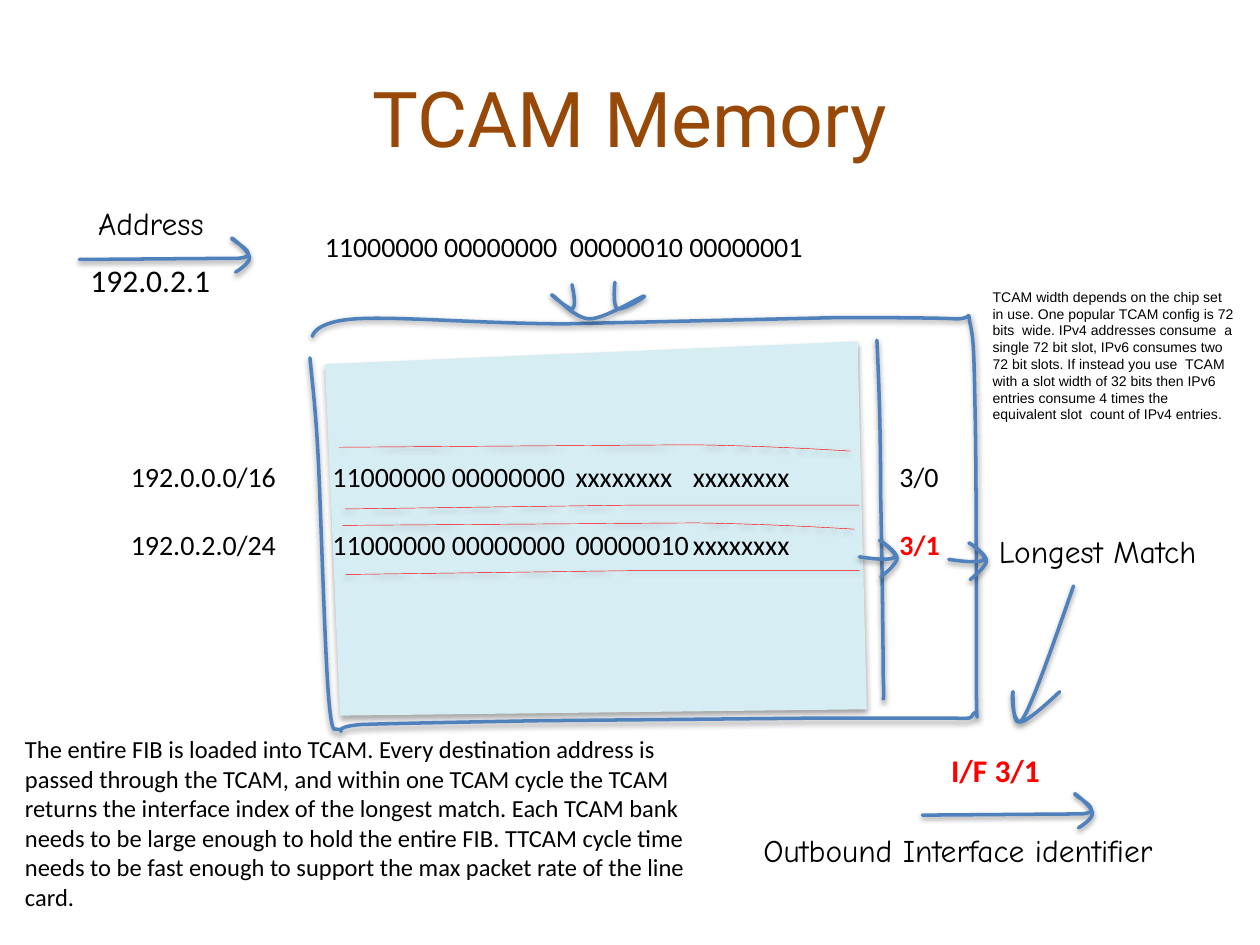
from lxml import etree
from pptx import Presentation
from pptx.dml.color import RGBColor
from pptx.enum.text import MSO_ANCHOR, PP_ALIGN
from pptx.oxml.ns import qn
from pptx.util import Inches, Pt

CENTER = PP_ALIGN.CENTER
MIDDLE = MSO_ANCHOR.MIDDLE
rgb = RGBColor.from_string
BLUE, RED, BLACK = "4F81BD", "FF0000", "000000"

deck = Presentation()
deck.slide_width, deck.slide_height = Inches(10), Inches(7.5)
slide = deck.slides.add_slide(deck.slide_layouts[6])


def sketch(start, parts, color=BLUE, width=2, shift=(0, 0), filled=False):
    dx, dy = shift
    flat = [n for part in parts for n in part]
    dots = [(Inches(x + dx), Inches(y + dy)) for x, y in zip(flat[::2], flat[1::2])]
    pen = slide.shapes.build_freeform(Inches(start[0] + dx), Inches(start[1] + dy))
    pen.add_line_segments(dots, close=filled)
    shape = pen.convert_to_shape()
    steps = list(shape._element.iter(qn("a:lnTo")))
    for part in parts:
        group = [steps.pop(0) for _ in range(len(part) // 2)]
        if len(group) == 3:
            curve = etree.Element(qn("a:cubicBezTo"))
            group[0].addprevious(curve)
            for step in group:
                curve.append(step[0])
                step.getparent().remove(step)
    if filled:
        shape.fill.solid()
        shape.fill.fore_color.rgb = rgb(color)
        shape.line.fill.background()
    else:
        shape.fill.background()
        shape.line.color.rgb = rgb(color)
        shape.line.width = Pt(width)
        shape._element.spPr.find(qn("a:ln")).set("cap", "rnd")
    shape.shadow.inherit = False
    effects = shape._element.spPr.find(qn("a:effectLst"))
    shade = etree.SubElement(effects, qn("a:outerShdw"), blurRad="40000",
                             dist="23000" if filled else "20000",
                             dir="5400000", rotWithShape="0")
    tint = etree.SubElement(shade, qn("a:srgbClr"), val=BLACK)
    etree.SubElement(tint, qn("a:alpha"), val="35000" if filled else "38000")


def label(text, box, size, face, color=BLACK, bold=False, wrap=False):
    frame = slide.shapes.add_textbox(*[Inches(n) for n in box]).text_frame
    frame.word_wrap = wrap
    line = frame.paragraphs[0]
    line.text = text
    line.font.size = Pt(size)
    line.font.name = face
    line.font.bold = bold
    line.font.color.rgb = rgb(color)
    return frame


sketch((2.58, 2.89), [(2.7, 5.68), (6.88, 5.63), (6.81, 2.86), (6.81, 2.71)],
       "D7EDF4", filled=True)

for shift in [(0, 0), (6.69, 4.41)]:
    sketch((0.63, 2.06), [(1.9, 2.05), (2.1, 2.03, 1.82, 1.9, 1.84, 1.89),
                          (1.85, 1.89, 1.98, 2, 1.98, 2.04),
                          (1.99, 2.09, 1.87, 2.16, 1.87, 2.16)], shift=shift)

sketch((2.46, 2.84), [
    (2.48, 3.05, 2.51, 3.27, 2.53, 3.72), (2.55, 4.17, 2.58, 5.2, 2.61, 5.55),
    (2.64, 5.89, 2.66, 5.76, 2.7, 5.79), (2.74, 5.83, 2.61, 5.77, 2.87, 5.75),
    (3.13, 5.74, 4.27, 5.72, 4.27, 5.72), (6.41, 5.7), (7.52, 5.7),
    (7.74, 5.7, 7.69, 5.71, 7.73, 5.66), (7.77, 5.62, 7.75, 5.85, 7.75, 5.46),
    (7.75, 5.06, 7.75, 3.77, 7.74, 3.29), (7.73, 2.81, 7.73, 2.7, 7.7, 2.57),
    (7.67, 2.44, 7.74, 2.54, 7.57, 2.53), (7.4, 2.52, 6.67, 2.52, 6.67, 2.52),
    (4.5, 2.57), (3.86, 2.57, 3.16, 2.51, 2.83, 2.53),
    (2.49, 2.55, 2.48, 2.67, 2.48, 2.67)])
sketch((6.96, 2.7), [(6.98, 3.1, 6.99, 3.5, 6.99, 3.94),
                     (7, 4.38, 7.01, 5.08, 7.01, 5.35),
                     (7.02, 5.61, 7.01, 5.54, 7.01, 5.54)])
sketch((4.54, 2.26), [
    (4.56, 2.35, 4.57, 2.44, 4.54, 2.45), (4.52, 2.46, 4.36, 2.33, 4.38, 2.34),
    (4.41, 2.35, 4.56, 2.53, 4.68, 2.53), (4.8, 2.53, 5.07, 2.36, 5.11, 2.35),
    (5.15, 2.34, 4.94, 2.47, 4.9, 2.45), (4.86, 2.43, 4.88, 2.24, 4.88, 2.24)])

for shift in [(0, 0), (0.03, 0.62)]:
    sketch((2.69, 3.55), [(5.49, 3.53), (6.16, 3.54, 6.75, 3.58, 6.75, 3.58)],
           RED, 0.25, shift)
for drop in [0, 0.52]:
    sketch((2.74, 4.04), [(4.98, 4.01), (6.82, 4.01)], RED, 0.25, (0, drop))

for shift in [(0, 0), (0.71, 0.02)]:
    sketch((6.82, 4.42), [(6.95, 4.44, 7.08, 4.45, 7.1, 4.42),
                          (7.13, 4.4, 6.98, 4.28, 6.98, 4.29),
                          (6.99, 4.29, 7.12, 4.38, 7.12, 4.43),
                          (7.12, 4.48, 6.99, 4.58, 6.99, 4.58)], shift=shift)
sketch((8.52, 4.65), [(8.36, 5.11, 8.2, 5.57, 8.12, 5.7),
                      (8.03, 5.84, 8.04, 5.48, 8.04, 5.49),
                      (8.03, 5.49, 8.03, 5.73, 8.1, 5.73),
                      (8.16, 5.73, 8.41, 5.49, 8.41, 5.49)])

title = label("TCAM Memory", (0.5, 0.3, 9, 1.25), 44, "Roboto", "984807", wrap=True)
title.vertical_anchor = MIDDLE
title.paragraphs[0].alignment = CENTER

label("Address", (0.68, 1.57, 1.18, 0.4), 18, "Comic Neue")
label("Outbound Interface identifier", (5.96, 6.55, 4.08, 0.4), 18, "Comic Neue")
label("Longest Match", (7.83, 4.17, 2.08, 0.4), 18, "Comic Neue")
label("192.0.2.1", (0.62, 2.02, 1.16, 0.4), 18, "Calibri")
label("I/F 3/1", (7.45, 5.91, 0.92, 0.4), 18, "Calibri", RED, True)
label("11000000 00000000  00000010 00000001", (2.48, 1.77, 4.43, 0.37), 16, "Calibri")

rows = [("192.0.0.0/16\t11000000 00000000\txxxxxxxx\txxxxxxxx\t", "3/0"),
        ("192.0.2.0/24\t11000000 00000000\t00000010\txxxxxxxx\t", "3/1")]
table = label("", (0.94, 3.6, 6.67, 0.91), 16, "Calibri", wrap=True)
table.add_paragraph().space_before = Pt(19.5)
for line, (entry, port) in zip(table.paragraphs, rows):
    tabs = etree.SubElement(line._p.get_or_add_pPr(), qn("a:tabLst"))
    for stop in [1.6, 3.53, 4.46, 6.1]:
        etree.SubElement(tabs, qn("a:tab"), pos=str(Inches(stop)), algn="l")
    line.font.size = Pt(16)
    line.font.name = "Calibri"
    line.add_run().text = entry
    last = line.add_run()
    last.text = port
    for run in line.runs:
        run.font.color.rgb = rgb(BLACK)
last.font.color.rgb = rgb(RED)
last.font.bold = True

label("The entire FIB is loaded into TCAM. Every destination address is passed "
      "through the TCAM, and within one TCAM cycle the TCAM returns the interface "
      "index of the longest match. Each TCAM bank needs to be large enough to hold "
      "the entire FIB. TTCAM cycle time needs to be fast enough to support the max "
      "packet rate of the line card.", (0.1, 5.78, 5.77, 1.51), 14, "Calibri", wrap=True)
label("TCAM width depends on the chip set in use. One popular TCAM config is 72 "
      "bits  wide. IPv4 addresses consume  a single 72 bit slot, IPv6 consumes two "
      "72 bit slots. If instead you use  TCAM with a slot width of 32 bits then IPv6 "
      "entries consume 4 times the  equivalent slot  count of IPv4 entries.",
      (7.78, 2.24, 2.13, 1.18), 8, "Arial", wrap=True)

deck.save("out.pptx")
